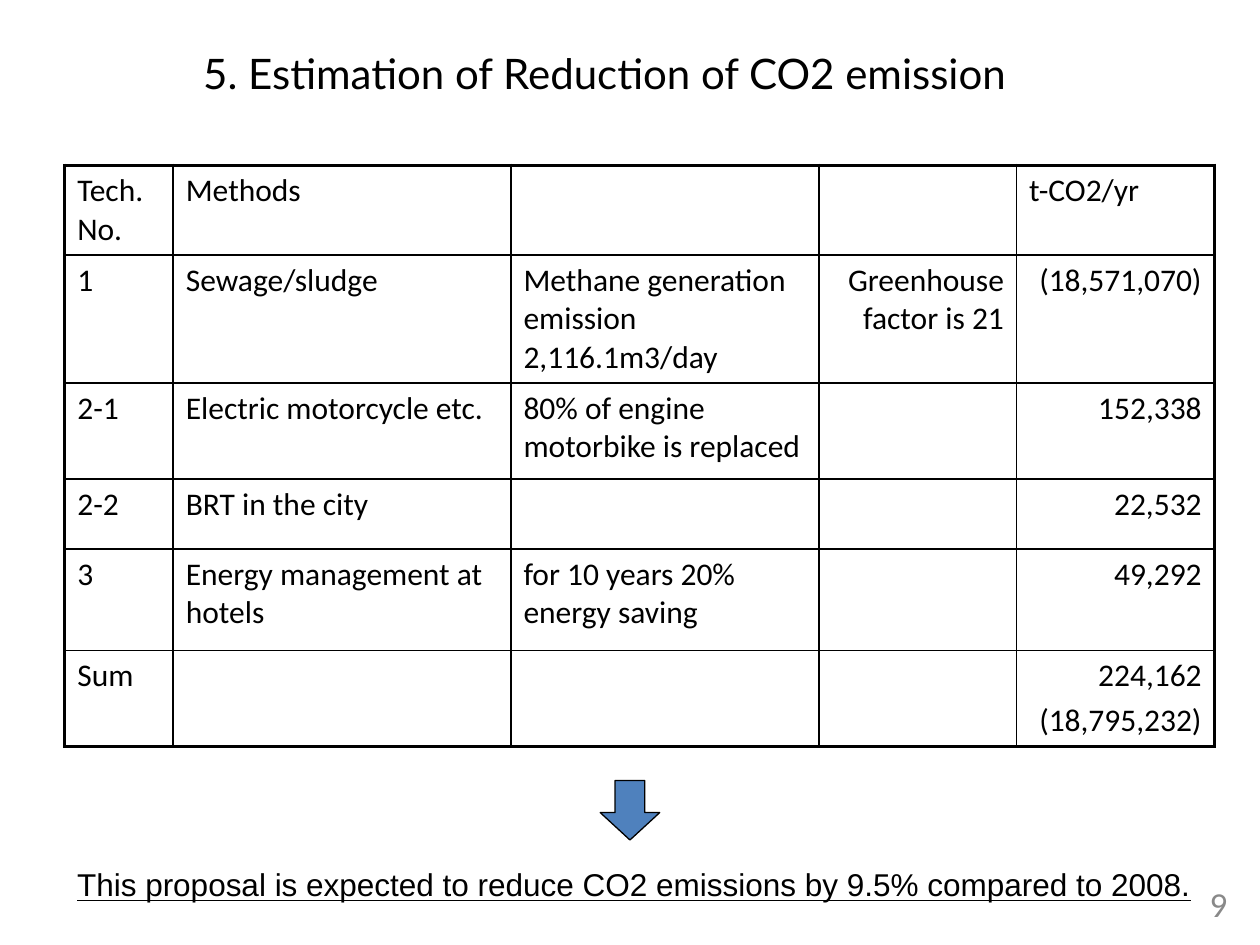
from lxml.etree import SubElement
from pptx import Presentation
from pptx.dml.color import RGBColor
from pptx.enum.shapes import MSO_SHAPE
from pptx.enum.text import MSO_ANCHOR, PP_ALIGN
from pptx.oxml import parse_xml
from pptx.oxml.ns import nsdecls
from pptx.util import Pt

# Content
TITLE = "5. Estimation of Reduction of CO2 emission"
CONCLUSION = "This proposal is expected to reduce CO2 emissions by 9.5% compared to 2008."
PAGE_NUMBER = "9"
ROWS = [
    ["Tech. No.", "Methods", "", "", "t-CO2/yr"],
    ["1", "Sewage/sludge", "Methane generation emission 2,116.1m3/day",
     "Greenhouse factor is 21", "(18,571,070)"],
    ["2-1", "Electric motorcycle etc.", "80% of engine motorbike is replaced", "", "152,338"],
    ["2-2", "BRT in the city", "", "", "22,532"],
    ["3", "Energy management at hotels", "for 10 years 20% energy saving", "", "49,292"],
    ["Sum", "", "", "", "224,162\n(18,795,232)"],
]

# Layout in points
COLUMN_WIDTHS = [62, 193, 176, 113, 113]
ROW_HEIGHTS = [45, 56, 55, 40, 58, 45]
TABLE_BOX = (37, 94.5, sum(COLUMN_WIDTHS), 347)
TITLE_BOX = (76, 26, 539, 31)
ARROW_BOX = (343, 446, 34, 34)
CONCLUSION_BOX = (37, 491, 657, 29)
NUMBER_BOX = (666, 502.5, 42.5, 27)
OUTER_LINE, INNER_LINE = 2.25, 1
FIRST_NUMERIC_COLUMN = 3

COLORS = {"black": "000000", "arrow": "4F81BD", "number": "898989"}
TITLE_FONT = {"name": "Lato", "size": Pt(24), "bold": False}
TABLE_FONT = {"name": "Calibri", "size": Pt(18), "bold": False}
CONCLUSION_FONT = {"name": "Arial", "size": Pt(18), "underline": True}
NUMBER_FONT = {"name": "Calibri", "size": Pt(20)}


def color(name):
    return RGBColor.from_string(COLORS[name])


def points(box):
    return [Pt(value) for value in box]


def write(text_frame, text, font, alignment=PP_ALIGN.LEFT, color_name="black"):
    text_frame.text = text
    for index, paragraph in enumerate(text_frame.paragraphs):
        paragraph.alignment = alignment
        paragraph.space_before = Pt(3.6 if index else 0)
        for attribute, value in font.items():
            setattr(paragraph.font, attribute, value)
        paragraph.font.color.rgb = color(color_name)


def add_text(slide, box, text, font, anchor=MSO_ANCHOR.TOP, **style):
    text_frame = slide.shapes.add_textbox(*points(box)).text_frame
    text_frame.word_wrap = True
    text_frame.vertical_anchor = anchor
    write(text_frame, text, font, **style)


def set_borders(cell, widths):
    properties = cell._tc.get_or_add_tcPr()
    for index, (side, width) in enumerate(widths.items()):
        line = parse_xml(f'<a:ln{side} {nsdecls("a")} w="{Pt(width)}"><a:solidFill>'
                         f'<a:srgbClr val="{COLORS["black"]}"/></a:solidFill></a:ln{side}>')
        properties.insert(index, line)


def add_emission_table(slide):
    row_count, column_count = len(ROWS), len(COLUMN_WIDTHS)
    frame = slide.shapes.add_table(row_count, column_count, *points(TABLE_BOX))
    table = frame.table
    table.first_row = table.horz_banding = False
    for column, width in zip(table.columns, COLUMN_WIDTHS):
        column.width = Pt(width)
    for row, height in zip(table.rows, ROW_HEIGHTS):
        row.height = Pt(height)
    for r, texts in enumerate(ROWS):
        for c, text in enumerate(texts):
            cell = table.cell(r, c)
            numeric = r > 0 and c >= FIRST_NUMERIC_COLUMN
            write(cell.text_frame, text, TABLE_FONT,
                  PP_ALIGN.RIGHT if numeric else PP_ALIGN.LEFT)
            cell.fill.background()
            on_edge = {"L": c == 0, "R": c == column_count - 1,
                       "T": r == 0, "B": r == row_count - 1}
            set_borders(cell, {side: OUTER_LINE if edge else INNER_LINE
                               for side, edge in on_edge.items()})


def main():
    presentation = Presentation()
    presentation.slide_width, presentation.slide_height = Pt(720), Pt(540)
    slide = presentation.slides.add_slide(presentation.slide_layouts[5])

    # Title
    title = slide.shapes.title
    title.left, title.top, title.width, title.height = points(TITLE_BOX)
    title.text_frame.vertical_anchor = MSO_ANCHOR.MIDDLE
    write(title.text_frame, TITLE, TITLE_FONT, PP_ALIGN.CENTER)

    # Emission table
    add_emission_table(slide)

    # Conclusion below the arrow
    add_text(slide, CONCLUSION_BOX, CONCLUSION, CONCLUSION_FONT)
    arrow = slide.shapes.add_shape(MSO_SHAPE.DOWN_ARROW, *points(ARROW_BOX))
    arrow.adjustments[0], arrow.adjustments[1] = 0.5, 0.46
    arrow.shadow.inherit = False
    arrow.fill.solid()
    arrow.fill.fore_color.rgb = color("arrow")
    arrow.line.color.rgb = color("black")
    arrow.line.width = Pt(0.75)

    # Page number
    add_text(slide, NUMBER_BOX, PAGE_NUMBER, NUMBER_FONT, MSO_ANCHOR.MIDDLE,
             alignment=PP_ALIGN.RIGHT, color_name="number")

    presentation.save("out.pptx")


if __name__ == "__main__":
    main()
